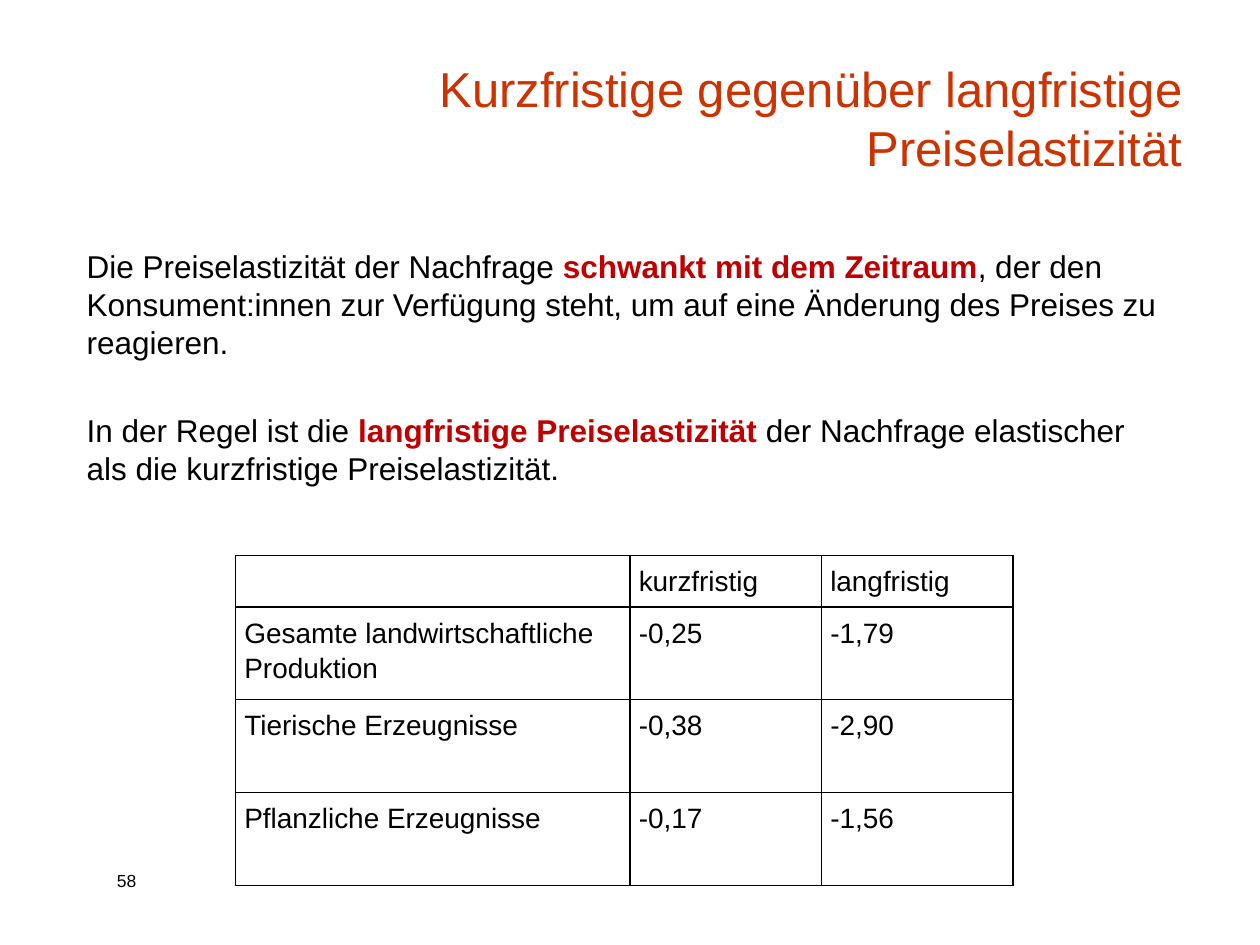
from lxml import etree
from pptx import Presentation
from pptx import util as u
from pptx.dml.color import RGBColor
from pptx.enum import text
from pptx.oxml.ns import qn

COLORS = {"title": "CC3300", "body": "000000", "accent": "C00000", "border": "000000"}


class Deck:
    font = "Arial"
    border_width = 0.96

    def __init__(self, prs):
        self.prs = prs
        self.s = prs.slides.add_slide(prs.slide_layouts[6])

    def x(self, share):
        return round(self.prs.slide_width * share / 100)

    def y(self, share):
        return round(self.prs.slide_height * share / 100)

    def style(self, p, size, color="body"):
        p.font.name = self.font
        p.font.size = u.Pt(size)
        p.font.color.rgb = RGBColor.from_string(COLORS[color])

    def text(self, box, paragraphs, size, color="body", align=text.PP_ALIGN.LEFT,
             anchor=text.MSO_ANCHOR.TOP, gap=0):
        left, top, width, height = box
        sp = self.s.shapes.add_textbox(self.x(left), self.y(top), self.x(width), self.y(height))
        tf = sp.text_frame
        tf.word_wrap = True
        tf.vertical_anchor = anchor
        for i, runs in enumerate(paragraphs):
            p = tf.paragraphs[0] if i == 0 else tf.add_paragraph()
            p.alignment = align
            if i:
                p.space_before = u.Pt(gap)
            self.style(p, size, color)
            for content, strong in runs:
                r = p.add_run()
                r.text = content
                if strong:
                    r.font.bold = True
                    r.font.color.rgb = RGBColor.from_string(COLORS["accent"])

    def borders(self, cell):
        props = cell._tc.get_or_add_tcPr()
        for i, side in enumerate(("lnL", "lnR", "lnT", "lnB")):
            line = etree.Element(qn(f"a:{side}"), w=str(u.Pt(self.border_width)))
            fill = etree.SubElement(line, qn("a:solidFill"))
            etree.SubElement(fill, qn("a:srgbClr"), val=COLORS["border"])
            props.insert(i, line)

    def table(self, left, top, widths, heights, rows, size):
        frame = self.s.shapes.add_table(len(rows), len(widths), self.x(left), self.y(top),
                                        self.x(sum(widths)), self.y(sum(heights)))
        table = frame.table
        table.first_row = table.horz_banding = False
        for column, width in zip(table.columns, widths):
            column.width = self.x(width)
        for row, height, values in zip(table.rows, heights, rows):
            row.height = self.y(height)
            for cell, value in zip(row.cells, values):
                cell.margin_left = cell.margin_right = u.Inches(0.07)
                cell.fill.background()
                self.borders(cell)
                cell.text = value
                p = cell.text_frame.paragraphs[0]
                p.line_spacing = 1.15
                p.space_after = u.Pt(5)
                self.style(p, size)


def main():
    prs = Presentation()
    prs.slide_width, prs.slide_height = u.Inches(10), u.Inches(7.5)
    deck = Deck(prs)
    deck.text((8.3, 91.4, 6.7, 3.5), [[("58", False)]], 10)
    deck.text((21, 12.67, 73.8, 6.67),
              [[("Kurzfristige gegenüber langfristige Preiselastizität", False)]],
              28, "title", text.PP_ALIGN.RIGHT, text.MSO_ANCHOR.BOTTOM)
    deck.text((5.9, 25.5, 87.3, 28.4), [
        [("Die Preiselastizität der Nachfrage ", False),
         ("schwankt mit dem Zeitraum", True),
         (", der den Konsument:innen zur Verfügung steht, um auf eine Änderung "
          "des Preises zu reagieren.", False)],
        [("In der Regel ist die ", False),
         ("langfristige Preiselastizität ", True),
         ("der Nachfrage elastischer als die kurzfristige Preiselastizität.", False)],
    ], 18, gap=28.8)
    deck.table(18.7, 58.8, [31.3, 15.2, 15.2], [5.13] + [9.83] * 3, [
        ("", "kurzfristig", "langfristig"),
        ("Gesamte landwirtschaftliche Produktion", "-0,25", "-1,79"),
        ("Tierische Erzeugnisse", "-0,38", "-2,90"),
        ("Pflanzliche Erzeugnisse", "-0,17", "-1,56"),
    ], 16)
    prs.save("out.pptx")


if __name__ == "__main__":
    main()
